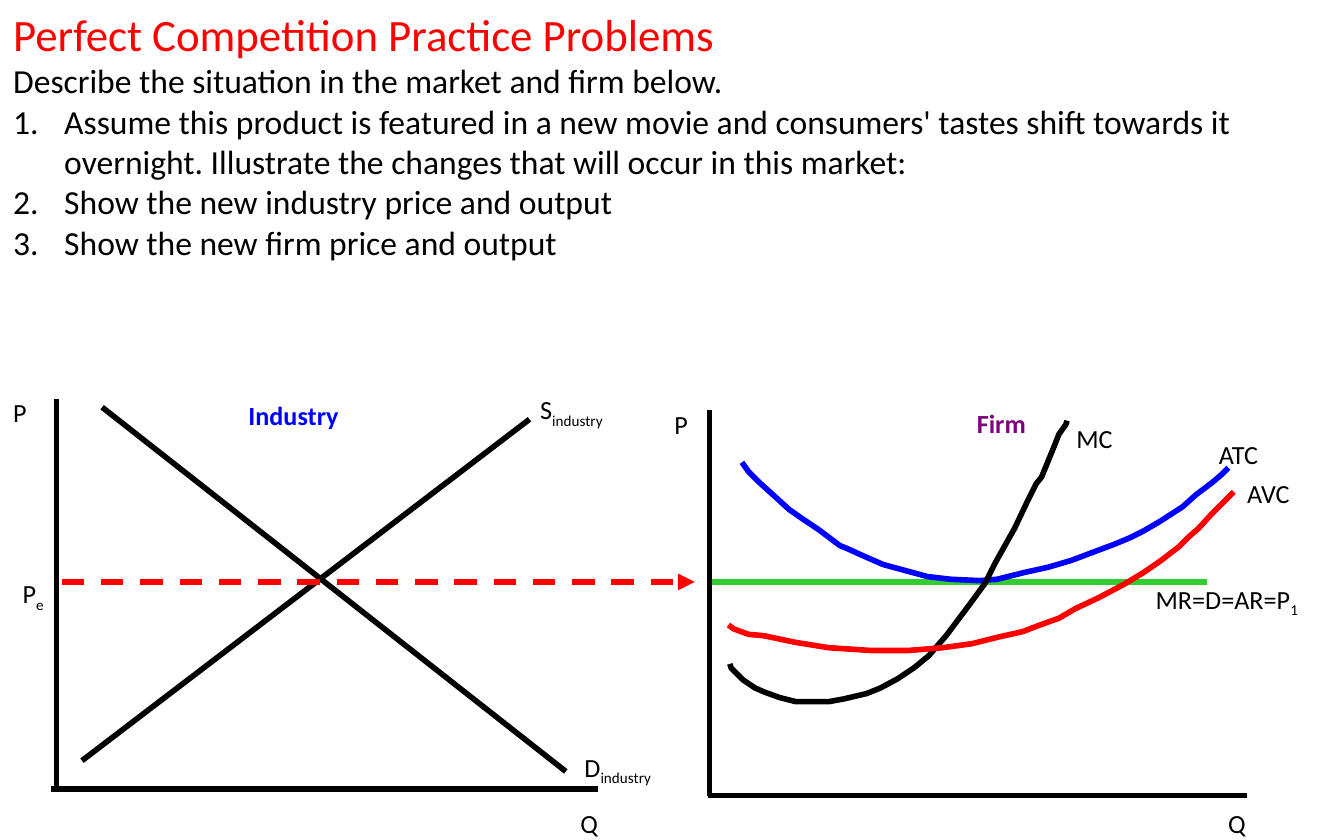
from lxml import etree
from pptx import Presentation
from pptx.dml.color import RGBColor
from pptx.enum.dml import MSO_LINE
from pptx.enum.shapes import MSO_CONNECTOR
from pptx.oxml.ns import qn
from pptx.util import Inches, Pt

STRAIGHT = MSO_CONNECTOR.STRAIGHT
DASH = MSO_LINE.DASH
BLACK = RGBColor(0, 0, 0)
RED = RGBColor(255, 0, 0)
BLUE = RGBColor(0, 0, 255)
GREEN = RGBColor(0x32, 0xCD, 0x32)
PURPLE = RGBColor(0x80, 0, 0x80)
FONT = "Calibri"
LINE_WIDTH = Pt(3)

# The slide is a grid of 1000 columns by 625 rows
COLUMNS, ROWS = 1000, 625
UNIT = Inches(10) // COLUMNS
LABEL_HEIGHT = 34
PRICE = 433  # row of the equilibrium price

deck = Presentation()
deck.slide_width, deck.slide_height = COLUMNS * UNIT, ROWS * UNIT
page = deck.slides.add_slide(deck.slide_layouts[6])


def add_text(column, row, width, height, lines, size, color):
    box = page.shapes.add_textbox(*(n * UNIT for n in (column, row, width, height)))
    box.text_frame.word_wrap = True
    box.text_frame.text = "\n".join(lines)
    for para in box.text_frame.paragraphs:
        para.font.name = FONT
        for span in para.runs:
            span.font.name = FONT
            span.font.size = Pt(size)
            span.font.color.rgb = color
    return box.text_frame.paragraphs


def add_line(start, end, color):
    line = page.shapes.add_connector(STRAIGHT, *(n * UNIT for n in start + end))
    line.line.color.rgb = color
    line.line.width = LINE_WIDTH
    etree.SubElement(line._element.spPr, qn("a:effectLst"))
    return line


# Heading and numbered tasks
heading, *body = add_text(0, 0, 996, 202, [
    "Perfect Competition Practice Problems",
    "Describe the situation in the market and firm below.",
    "Assume this product is featured in a new movie and consumers' tastes shift "
    "towards it overnight. Illustrate the changes that will occur in this market:",
    "Show the new industry price and output",
    "Show the new firm price and output",
], 18, BLACK)
heading.runs[0].font.size = Pt(24)
heading.runs[0].font.color.rgb = RED
for para in body[1:]:
    properties = para._p.get_or_add_pPr()
    properties.set("marL", str(38 * UNIT))
    properties.set("indent", str(-38 * UNIT))
    etree.SubElement(properties, qn("a:buFont"), typeface="+mj-lt")
    etree.SubElement(properties, qn("a:buAutoNum"), type="arabicPeriod")

# Axes, supply and demand, and the firm's price line
for start, end, color in [
    ((530, PRICE), (898, PRICE), GREEN),
    ((42, 297), (42, 587), BLACK),
    ((38, 587), (445, 587), BLACK),
    ((76, 303), (421, 574), BLACK),
    ((61, 566), (394, 312), BLACK),
    ((528, 592), (528, 305), BLACK),
    ((527, 592), (928, 592), BLACK),
]:
    add_line(start, end, color)

# Cost curves
average_total_cost = [
    (552, 344), (557, 351), (565, 359), (575, 368), (587, 379), (597, 386),
    (609, 394), (625, 406), (630, 408), (641, 413), (657, 420), (679, 426),
    (690, 429), (707, 431), (729, 432), (742, 431), (762, 426), (780, 422),
    (797, 417), (813, 411), (829, 405), (841, 400), (851, 395), (863, 388),
    (880, 377), (890, 368), (902, 359), (909, 353), (914, 348),
]
marginal_cost = [
    (543, 494), (544, 497), (553, 506), (562, 512), (569, 515), (580, 519),
    (592, 522), (617, 522), (628, 520), (645, 516), (655, 512), (668, 505),
    (680, 497), (691, 488), (704, 473), (722, 449), (733, 434), (741, 418),
    (755, 393), (764, 374), (771, 360), (775, 355), (784, 333), (788, 323),
    (793, 316), (794, 313),
]
average_variable_cost = [
    (542, 465), (546, 468), (557, 472), (568, 473), (592, 478), (617, 482),
    (648, 484), (676, 484), (701, 482), (723, 479), (743, 474), (761, 470),
    (774, 465), (788, 460), (800, 453), (817, 445), (836, 435), (851, 426),
    (864, 417), (877, 407), (884, 400), (892, 393), (902, 382), (910, 374),
    (918, 366),
]
for points, color in [
    (average_total_cost, BLUE),
    (marginal_cost, BLACK),
    (average_variable_cost, RED),
]:
    builder = page.shapes.build_freeform(*points[0], scale=UNIT)
    builder.add_line_segments(points[1:], close=False)
    curve = builder.convert_to_shape()
    curve.shadow.inherit = False
    curve.fill.background()
    curve.line.color.rgb = color
    curve.line.width = LINE_WIDTH

# Dashed arrow carrying the industry price to the firm
arrow = add_line((46, PRICE), (517, PRICE), RED)
arrow.line.dash_style = DASH
etree.SubElement(arrow.line._get_or_add_ln(), qn("a:tailEnd"), type="triangle")

# Labels, each with an optional subscript
for column, row, width, text, subscript in [
    (422, 596, 50, "Q", ""),
    (904, 596, 50, "Q", ""),
    (0, 290, 44, "P", ""),
    (492, 299, 44, "P", ""),
    (392, 288, 102, "S", "industry"),
    (425, 554, 104, "D", "industry"),
    (791, 309, 65, "MC", ""),
    (897, 321, 73, "ATC", ""),
    (918, 350, 78, "AVC", ""),
    (850, 429, 150, "MR=D=AR=P", "1"),
    (7, 425, 55, "P", "e"),
]:
    para = add_text(column, row, width, LABEL_HEIGHT, [text], 14, BLACK)[0]
    if subscript:
        span = para.add_run()
        span.text = subscript
        span.font.name = FONT
        span.font.size = Pt(14)
        span.font.color.rgb = BLACK
        span.font._element.set("baseline", "-25000")

# Graph titles
for column, row, width, text, color in [
    (175, 292, 121, "Industry", BLUE),
    (717, 298, 80, "Firm", PURPLE),
]:
    para = add_text(column, row, width, LABEL_HEIGHT, [text], 14, color)[0]
    para.runs[0].font.bold = True

deck.save("out.pptx")
